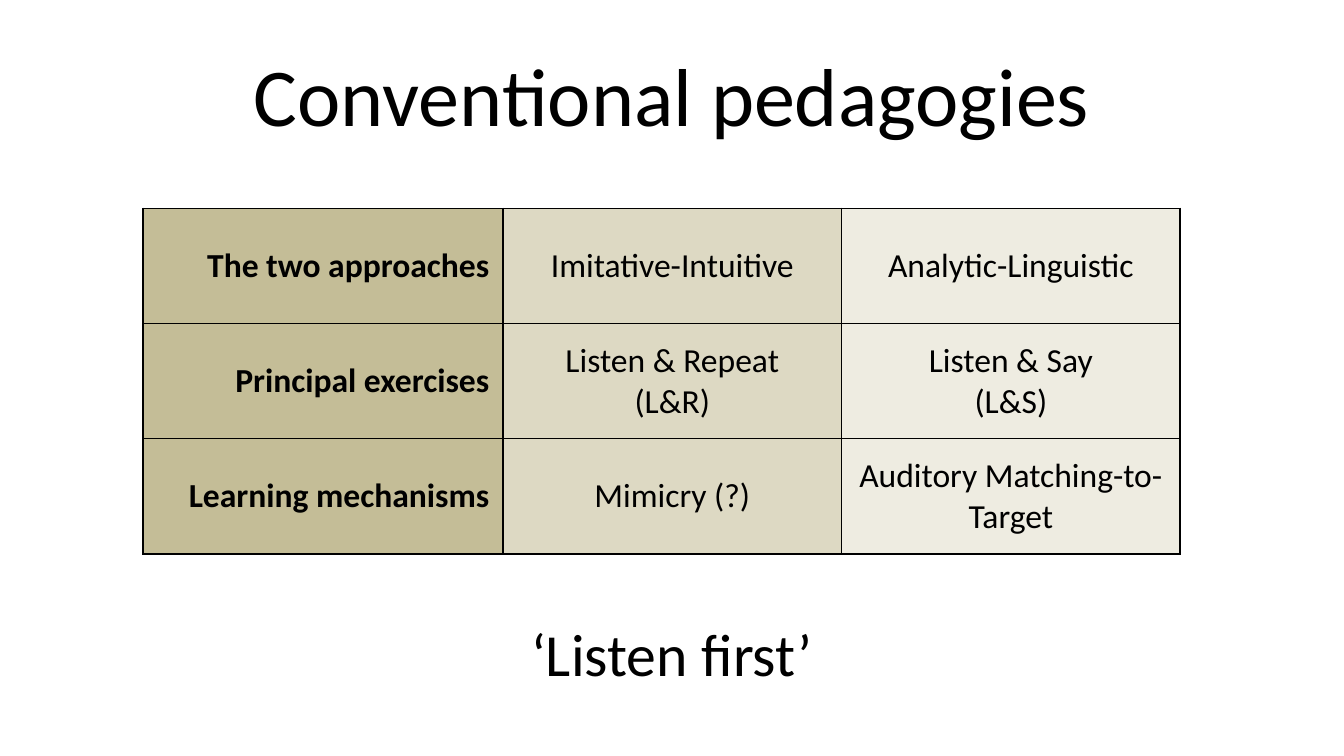
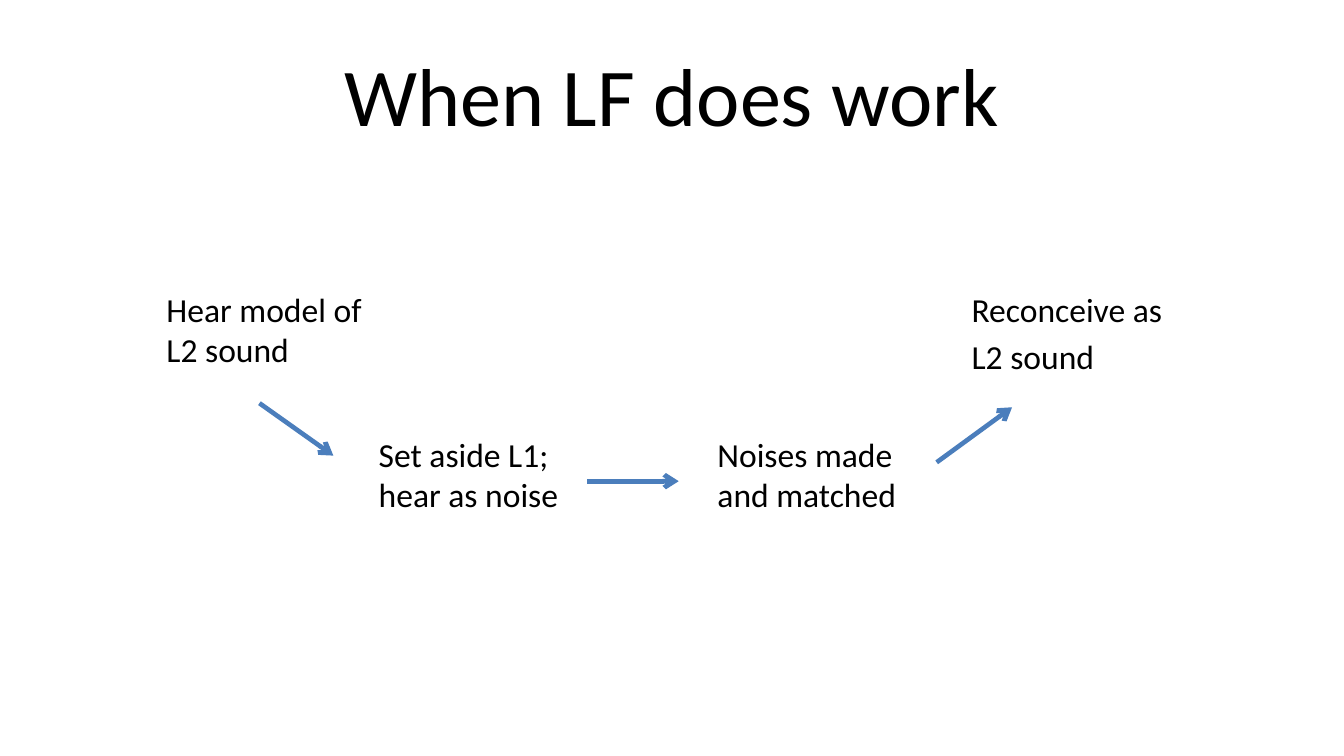
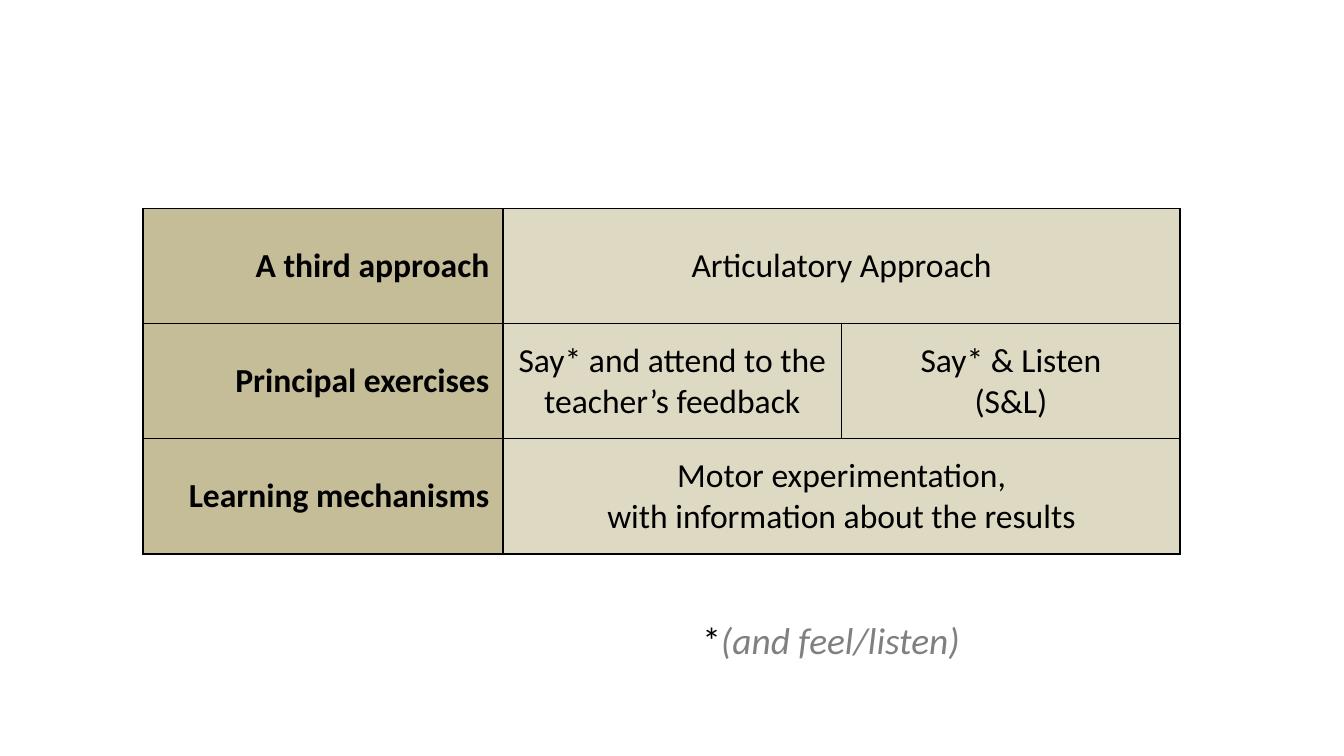
from lxml.etree import SubElement
from pptx import Presentation
from pptx.dml.color import RGBColor
from pptx.enum.shapes import MSO_CONNECTOR
from pptx.enum.text import MSO_ANCHOR, MSO_AUTO_SIZE, PP_ALIGN
from pptx.oxml import parse_xml
from pptx.oxml.ns import nsdecls, qn
from pptx.util import Pt

FONT = "Calibri"
BLACK = RGBColor(0x00, 0x00, 0x00)
GREY = RGBColor(0x80, 0x80, 0x80)
BLUE = RGBColor(0x4B, 0x7E, 0xBC)
KHAKI = RGBColor(0xC4, 0xBD, 0x97)
SAND = RGBColor(0xDD, 0xD9, 0xC3)
IVORY = RGBColor(0xEE, 0xEC, 0xE1)
COLUMN_WIDTHS = [193, 181.4, 181.4]
ROW_HEIGHT = 61.7


def add_text(para, text, size, color=BLACK, bold=False, italic=False):
    for number, line in enumerate(text.split("\n")):
        if number:
            para.add_line_break()
        span = para.add_run()
        span.text = line
        span.font.name = FONT
        span.font.size = Pt(size)
        span.font.color.rgb = color
        span.font.bold = bold
        span.font.italic = italic


def add_approach_table(page, rows, fills):
    frame = page.shapes.add_table(
        len(rows), len(COLUMN_WIDTHS), Pt(76.5), Pt(111.6),
        Pt(sum(COLUMN_WIDTHS)), Pt(ROW_HEIGHT * len(rows)))
    table = frame.table
    for column, width in zip(table.columns, COLUMN_WIDTHS):
        column.width = Pt(width)
    for r, texts in enumerate(rows):
        table.rows[r].height = Pt(ROW_HEIGHT)
        for c, fill in enumerate(fills):
            cell = table.cell(r, c)
            cell.vertical_anchor = MSO_ANCHOR.MIDDLE
            properties = cell._tc.get_or_add_tcPr()
            for side in ("lnL", "lnR", "lnT", "lnB"):
                properties.append(parse_xml(
                    f'<a:{side} {nsdecls("a")} w="{Pt(1)}"><a:solidFill>'
                    f'<a:srgbClr val="{BLACK}"/></a:solidFill></a:{side}>'))
            cell.fill.solid()
            cell.fill.fore_color.rgb = fill
            if c < len(texts):
                para = cell.text_frame.paragraphs[0]
                para.alignment = PP_ALIGN.CENTER if c else PP_ALIGN.RIGHT
                add_text(para, texts[c], 18, bold=c == 0)
        if len(texts) < len(fills):
            table.cell(r, len(texts) - 1).merge(table.cell(r, len(fills) - 1))


deck = Presentation()
deck.slide_width = Pt(720)
deck.slide_height = Pt(405)
content_layout = deck.slide_layouts[1]
title_layout = deck.slide_layouts[5]

conventional_page = deck.slides.add_slide(content_layout)
working_page = deck.slides.add_slide(title_layout)
third_page = deck.slides.add_slide(content_layout)

for page, heading in [
    (conventional_page, "Conventional pedagogies"),
    (working_page, "When LF does work"),
]:
    title = page.shapes.title
    title.left, title.top, title.width, title.height = Pt(36), Pt(16.2), Pt(648), Pt(67.5)
    title.text_frame.vertical_anchor = MSO_ANCHOR.MIDDLE
    title.text_frame.auto_size = MSO_AUTO_SIZE.NONE
    para = title.text_frame.paragraphs[0]
    para.alignment = PP_ALIGN.CENTER
    add_text(para, heading, 44)

empty_title = third_page.shapes.title.element
empty_title.getparent().remove(empty_title)

for page, left, spans in [
    (conventional_page, 36, [("‘Listen first’", 32, BLACK, False)]),
    (third_page, 206.6, [("*", 20, BLACK, False), ("(and feel/listen)", 20, GREY, True)]),
]:
    caption = page.placeholders[1]
    caption.left, caption.top = Pt(left), Pt(327)
    caption.width, caption.height = Pt(684 - left), Pt(57)
    caption.text_frame.auto_size = MSO_AUTO_SIZE.NONE
    para = caption.text_frame.paragraphs[0]
    para.alignment = PP_ALIGN.CENTER
    properties = para._p.get_or_add_pPr()
    properties.set("marL", "0")
    properties.set("indent", "0")
    SubElement(properties, qn("a:buNone"))
    for text, size, color, italic in spans:
        add_text(para, text, size, color, italic=italic)

add_approach_table(conventional_page, [
    ["The two approaches", "Imitative-Intuitive", "Analytic-Linguistic"],
    ["Principal exercises", "Listen & Repeat\n(L&R)", "Listen & Say\n(L&S)"],
    ["Learning mechanisms", "Mimicry (?)", "Auditory Matching-to-Target"],
], [KHAKI, SAND, IVORY])

for left, top, width, lines in [
    (195.8, 229, 121, ["Set aside L1; hear as noise"]),
    (377.3, 229, 122.4, ["Noises made and matched"]),
    (82.1, 151.2, 133.2, ["Hear model of L2 sound"]),
    (513.4, 151.2, 121, ["Reconceive as", "L2 sound"]),
]:
    box = working_page.shapes.add_textbox(Pt(left), Pt(top), Pt(width), Pt(62.6))
    box.text_frame.word_wrap = True
    for number, line in enumerate(lines):
        para = box.text_frame.add_paragraph() if number else box.text_frame.paragraphs[0]
        para.space_before = Pt(3.6)
        add_text(para, line, 18)

for start_x, start_y, end_x, end_y in [
    (139, 216, 178.6, 244.1),
    (314.6, 257.8, 363.6, 257.8),
    (501.8, 247.7, 542.2, 218.2),
]:
    arrow = working_page.shapes.add_connector(
        MSO_CONNECTOR.STRAIGHT, Pt(start_x), Pt(start_y), Pt(end_x), Pt(end_y))
    arrow.line.color.rgb = BLUE
    arrow.line.width = Pt(2.5)
    SubElement(arrow.line._get_or_add_ln(), qn("a:tailEnd"), type="arrow")
    SubElement(arrow.element.spPr, qn("a:effectLst"))

add_approach_table(third_page, [
    ["A third approach", "Articulatory Approach"],
    ["Principal exercises", "Say* and attend to the teacher’s feedback", "Say* & Listen\n(S&L)"],
    ["Learning mechanisms", "Motor experimentation,\nwith information about the results"],
], [KHAKI, SAND, SAND])

deck.save("out.pptx")
